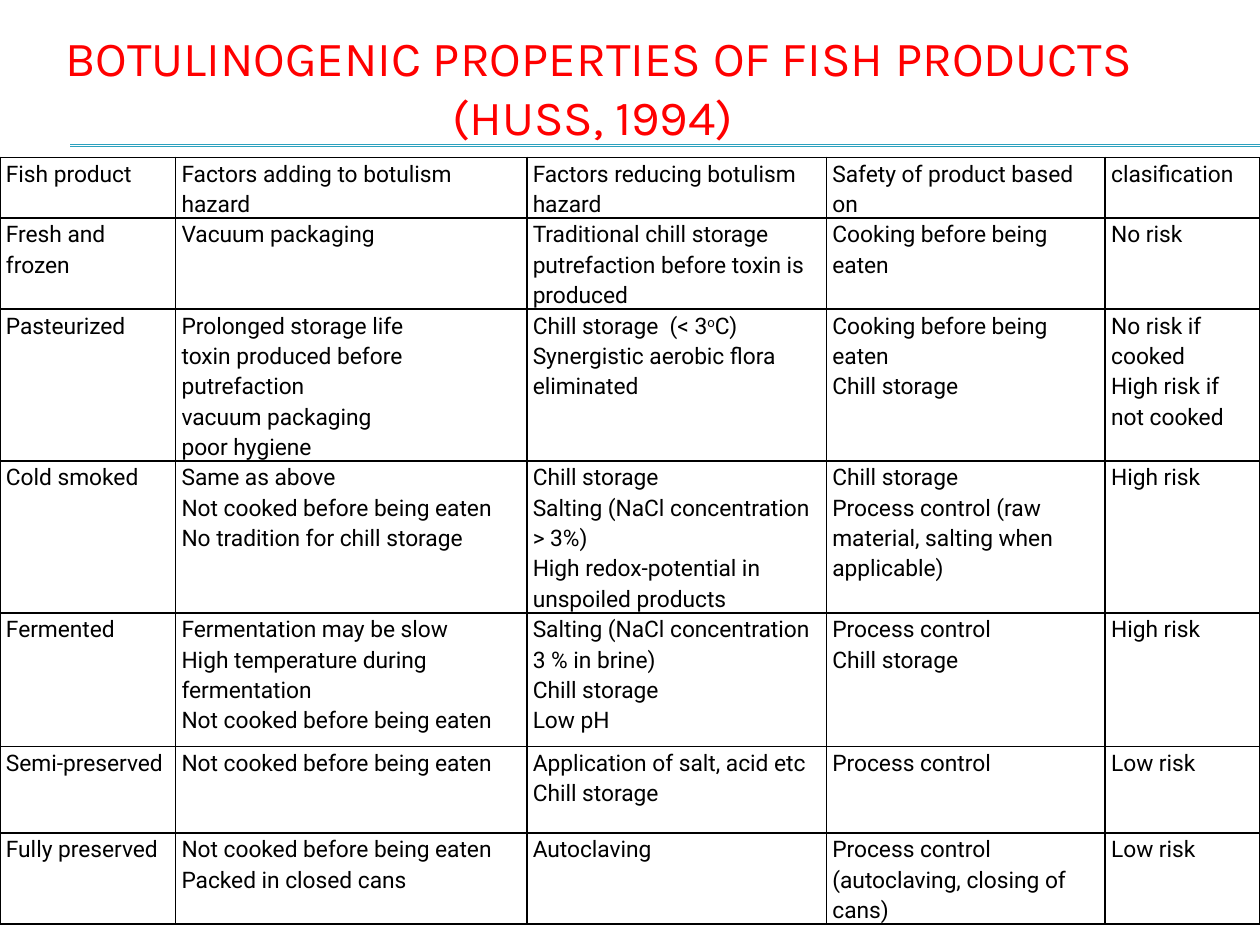
"""Build a slide with a table of botulinogenic properties of fish products."""
from dataclasses import dataclass

from lxml import etree
from pptx import Presentation
from pptx import util as u
from pptx.dml.color import RGBColor
from pptx.enum import shapes, text
from pptx.oxml import ns
from pptx.slide import Slide
from pptx.table import _Cell as Cell

RED = RGBColor(0xFF, 0x00, 0x00)
TEAL = RGBColor(0x2D, 0xA2, 0xBF)
BLACK = RGBColor(0x00, 0x00, 0x00)
WHITE = RGBColor(0xFF, 0xFF, 0xFF)
TITLE = "BOTULINOGENIC PROPERTIES OF FISH PRODUCTS (HUSS, 1994) "
TITLE_FONT, BODY_FONT = "Karla", "Roboto"
SUPERSCRIPT_MARK = "^"
COLUMN_WIDTHS = (3.54, 7.08, 6.04, 5.62, 3.12)


@dataclass(frozen=True)
class TableRow:
    height: float
    cells: tuple[str, ...]


@dataclass(frozen=True)
class Rule:
    left: float
    right: float
    top: float


RULES = (Rule(1.42, 25.4, 2.92), Rule(1.42, 25.4, 2.95))
ROWS = (
    TableRow(1.17, ("Fish product", "Factors adding to botulism hazard",
                    "Factors reducing botulism hazard",
                    "Safety of product based on", "clasification")),
    TableRow(1.75, ("Fresh and frozen", "Vacuum packaging",
                    "Traditional chill storage putrefaction before toxin is produced",
                    "Cooking before being eaten", "No risk")),
    TableRow(2.95, ("Pasteurized",
                    "Prolonged storage life\ntoxin produced before putrefaction\n"
                    "vacuum packaging\npoor hygiene",
                    "Chill storage  (< 3^o^C)\nSynergistic aerobic flora eliminated",
                    "Cooking before being eaten\nChill storage",
                    "No risk if cooked\nHigh risk if not cooked")),
    TableRow(2.95, ("Cold smoked",
                    "Same as above\nNot cooked before being eaten\n"
                    "No tradition for chill storage",
                    "Chill storage\nSalting (NaCl concentration > 3%)\n"
                    "High redox-potential in unspoiled products",
                    "Chill storage\nProcess control (raw material, salting when applicable)",
                    "High risk")),
    TableRow(2.69, ("Fermented",
                    "Fermentation may be slow\nHigh temperature during fermentation\n"
                    "Not cooked before being eaten",
                    "Salting (NaCl concentration 3 % in brine)\nChill storage\nLow pH",
                    "Process control\nChill storage", "High risk")),
    TableRow(1.75, ("Semi-preserved", "Not cooked before being eaten",
                    "Application of salt, acid etc\nChill storage",
                    "Process control", "Low risk")),
    TableRow(1.75, ("Fully preserved",
                    "Not cooked before being eaten\nPacked in closed cans", "Autoclaving",
                    "Process control (autoclaving, closing of cans)", "Low risk")),
)


def add_run(paragraph, words: str, font_name: str, size: float, color: RGBColor):
    run = paragraph.add_run()
    run.text = words
    run.font.name = font_name
    run.font.size = u.Pt(size)
    run.font.color.rgb = color
    return run


def add_rule(slide: Slide, rule: Rule) -> None:
    top = u.Cm(rule.top)
    connector = slide.shapes.add_connector(
        shapes.MSO_CONNECTOR.STRAIGHT, u.Cm(rule.left), top, u.Cm(rule.right), top)
    connector.line.color.rgb = TEAL
    connector.line.width = u.Pt(0.75)
    etree.SubElement(connector._element.spPr, ns.qn("a:effectLst"))


def set_title(slide: Slide) -> None:
    title = slide.shapes.title
    title.left, title.top = u.Cm(0), u.Cm(0.58)
    title.width, title.height = u.Cm(24.13), u.Cm(2.34)
    frame = title.text_frame
    frame.word_wrap = True
    frame.auto_size = text.MSO_AUTO_SIZE.NONE
    frame.vertical_anchor = text.MSO_ANCHOR.MIDDLE
    paragraph = frame.paragraphs[0]
    paragraph.alignment = text.PP_ALIGN.CENTER
    add_run(paragraph, TITLE, TITLE_FONT, 28, RED)


def set_borders(cell: Cell) -> None:
    properties = cell._tc.get_or_add_tcPr()
    for position, side in enumerate(("lnL", "lnR", "lnT", "lnB")):
        border = etree.Element(ns.qn(f"a:{side}"), w=str(u.Pt(1)))
        fill = etree.SubElement(border, ns.qn("a:solidFill"))
        etree.SubElement(fill, ns.qn("a:srgbClr"), val=str(BLACK))
        properties.insert(position, border)


def fill_cell(cell: Cell, content: str) -> None:
    cell.margin_left = cell.margin_right = u.Cm(0.12)
    cell.margin_top = cell.margin_bottom = 0
    cell.vertical_anchor = text.MSO_ANCHOR.TOP
    cell.fill.solid()
    cell.fill.fore_color.rgb = WHITE
    set_borders(cell)
    frame = cell.text_frame
    for index, line in enumerate(content.split("\n")):
        paragraph = frame.add_paragraph() if index else frame.paragraphs[0]
        paragraph.line_spacing = 1.15
        for part, words in enumerate(line.split(SUPERSCRIPT_MARK)):
            run = add_run(paragraph, words, BODY_FONT, 13, BLACK)
            if part % 2:
                run._r.get_or_add_rPr().set("baseline", "30000")


def add_product_table(slide: Slide) -> None:
    table = slide.shapes.add_table(
        len(ROWS), len(COLUMN_WIDTHS), u.Cm(0), u.Cm(3.17),
        u.Cm(sum(COLUMN_WIDTHS)), u.Cm(sum(row.height for row in ROWS))).table
    table.first_row = table.horz_banding = False
    for column, width in zip(table.columns, COLUMN_WIDTHS):
        column.width = u.Cm(width)
    for row_index, row in enumerate(ROWS):
        table.rows[row_index].height = u.Cm(row.height)
        for column_index, content in enumerate(row.cells):
            fill_cell(table.cell(row_index, column_index), content)


def main() -> None:
    presentation = Presentation()
    presentation.slide_width, presentation.slide_height = u.Cm(25.4), u.Cm(19.05)
    slide = presentation.slides.add_slide(presentation.slide_layouts[5])
    for rule in RULES:
        add_rule(slide, rule)
    set_title(slide)
    add_product_table(slide)
    presentation.save("out.pptx")


if __name__ == "__main__":
    main()
